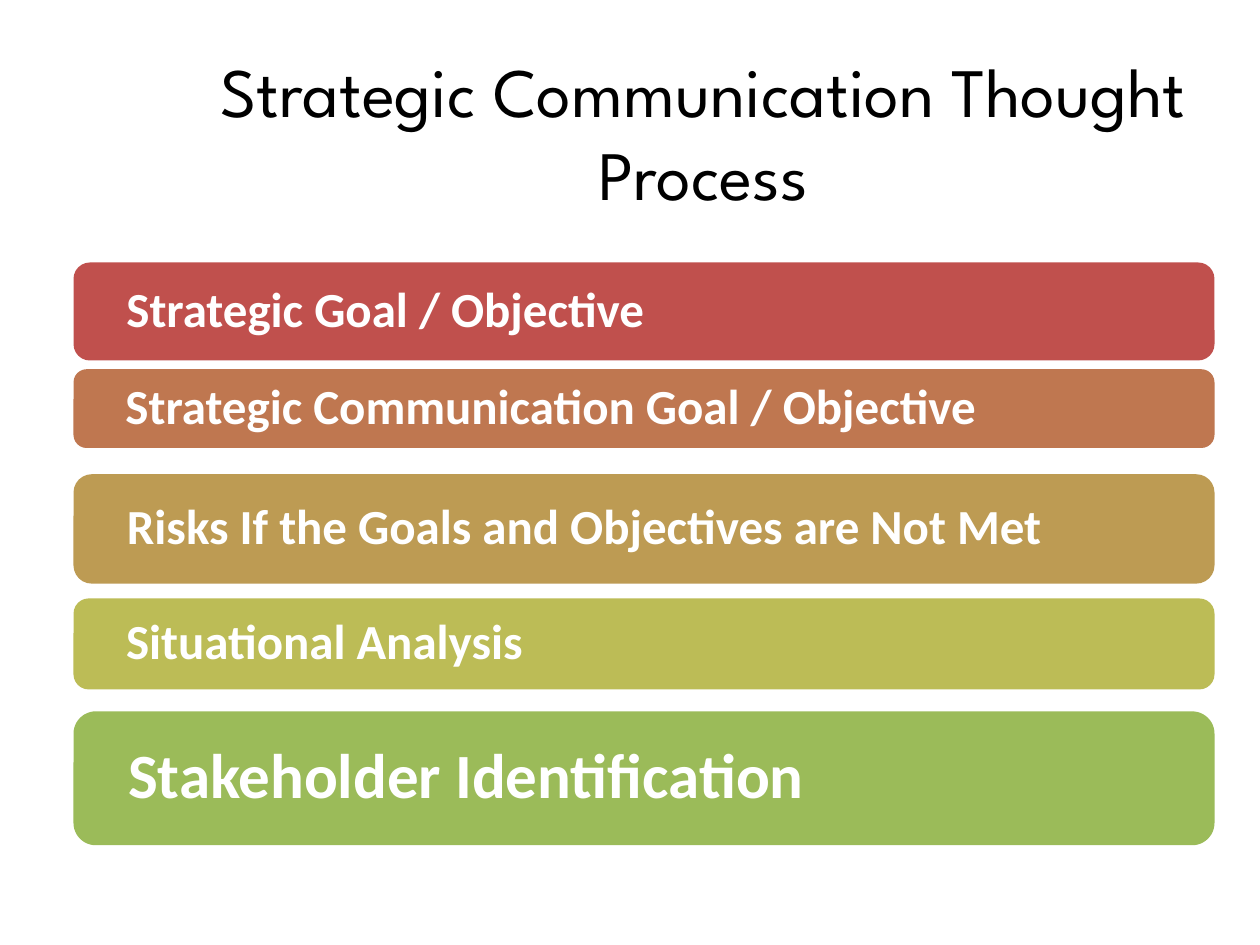
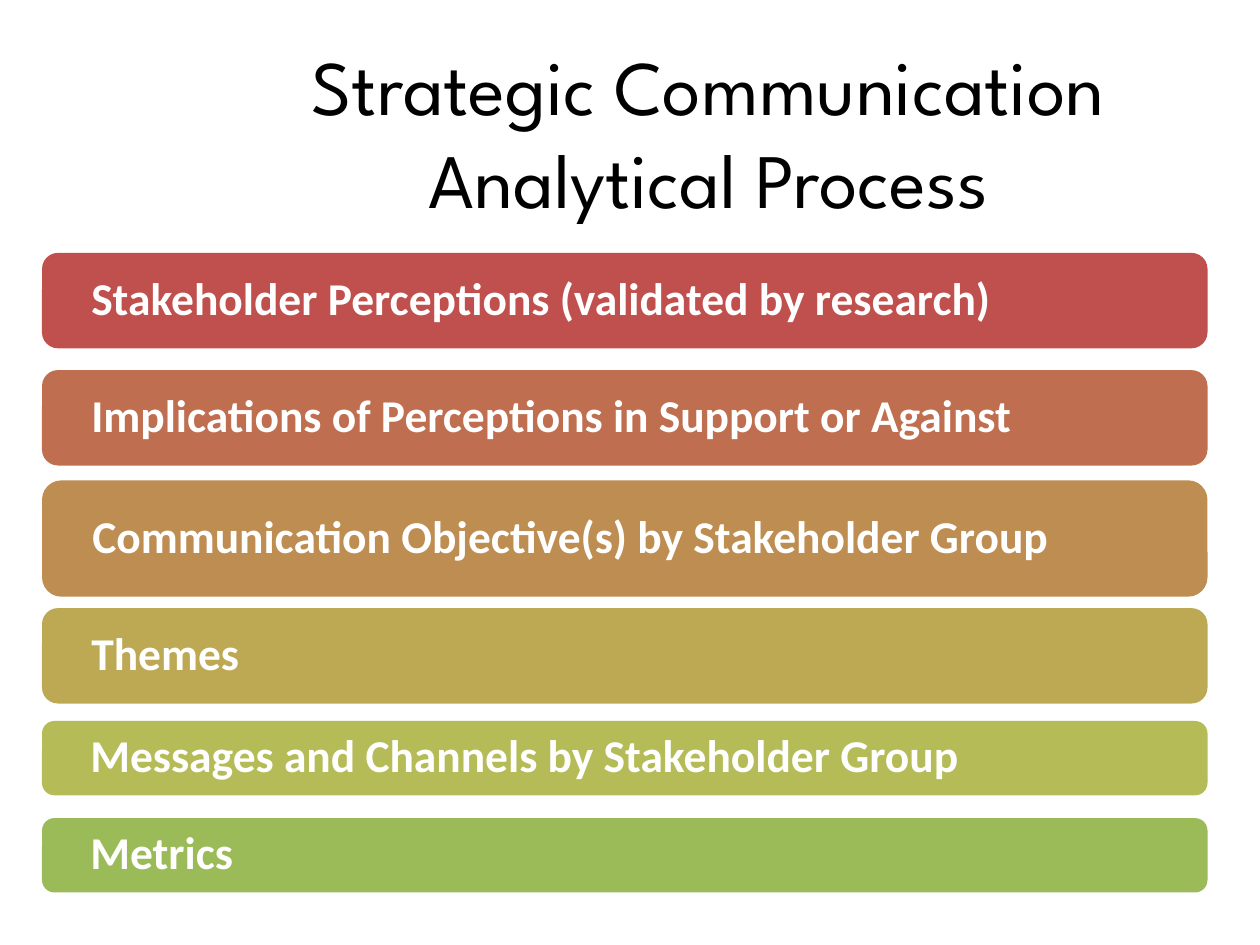
from colorsys import hls_to_rgb, rgb_to_hls

from pptx import Presentation
from pptx.dml.color import RGBColor
from pptx.enum.shapes import MSO_SHAPE
from pptx.enum.text import MSO_ANCHOR, PP_ALIGN
from pptx.util import Pt

# Each bar: text, top, height and, where it differs, font size
SLIDES = [
    {
        "title": "Strategic Communication Thought Process",
        "title_box": (108, 24, 588, 102),
        "title_size": 39.6,
        "bars_left": 42,
        "bars_width": 652,
        "bar_size": 28,
        "indent": 27.5,
        "bars": [
            ("Strategic Goal / Objective", 150, 56),
            ("Strategic Communication Goal / Objective", 211, 45),
            ("Risks If the Goals and Objectives are Not Met", 271, 62.5),
            ("Situational Analysis", 342, 52),
            ("Stakeholder Identification", 406.5, 76.5, 36),
        ],
    },
    {
        "title": "Strategic Communication Analytical Process",
        "title_box": (78, 12, 654, 126),
        "title_size": 44,
        "bars_left": 24,
        "bars_width": 666,
        "bar_size": 26,
        "indent": 25.5,
        "bars": [
            ("Stakeholder Perceptions (validated by research)", 144.5, 54.5),
            ("Implications of Perceptions in Support or Against", 211.5, 54.5),
            ("Communication Objective(s) by Stakeholder Group", 274.5, 66.5),
            ("Themes", 347.5, 54.5),
            ("Messages and Channels by Stakeholder Group", 412, 42.5),
            ("Metrics", 467.5, 42.5),
        ],
    },
]

TITLE_FONT = "League Spartan"
BAR_FONT = "Calibri"
BLACK = RGBColor(0x00, 0x00, 0x00)
WHITE = RGBColor(0xFF, 0xFF, 0xFF)
FIRST_BAR = RGBColor(0xC0, 0x50, 0x4D)
LAST_BAR = RGBColor(0x9B, 0xBB, 0x59)

ROUNDED = MSO_SHAPE.ROUNDED_RECTANGLE
MIDDLE = MSO_ANCHOR.MIDDLE
LEFT, CENTER = PP_ALIGN.LEFT, PP_ALIGN.CENTER
BLANK_LAYOUT = 6


def blend(share):
    """Colour between the first and last bar, stepping evenly through hue."""
    first, last = (rgb_to_hls(*(part / 255 for part in colour))
                   for colour in (FIRST_BAR, LAST_BAR))
    mixed = [a + (b - a) * share for a, b in zip(first, last)]
    return RGBColor(*(round(part * 255) for part in hls_to_rgb(*mixed)))


def write(shape, text, *, font, size, color, bold=False, align=LEFT,
          line_spacing=1.0, indent=7.2):
    frame = shape.text_frame
    frame.word_wrap = True
    frame.vertical_anchor = MIDDLE
    frame.margin_left = Pt(indent)
    paragraph = frame.paragraphs[0]
    paragraph.alignment = align
    paragraph.line_spacing = line_spacing
    run = paragraph.add_run()
    run.text = text
    run.font.name = font
    run.font.size = Pt(size)
    run.font.bold = bold
    run.font.color.rgb = color


def add_bar(slide, box, fill):
    bar = slide.shapes.add_shape(ROUNDED, *map(Pt, box))
    bar.shadow.inherit = False
    bar.fill.solid()
    bar.fill.fore_color.rgb = fill
    bar.line.fill.background()
    return bar


def build_slide(presentation, content):
    slide = presentation.slides.add_slide(presentation.slide_layouts[BLANK_LAYOUT])
    title = slide.shapes.add_textbox(*map(Pt, content["title_box"]))
    write(title, content["title"], font=TITLE_FONT, size=content["title_size"],
          color=BLACK, align=CENTER)

    bars = content["bars"]
    for index, (text, top, height, *own_size) in enumerate(bars):
        box = (content["bars_left"], top, content["bars_width"], height)
        bar = add_bar(slide, box, blend(index / (len(bars) - 1)))
        size = own_size[0] if own_size else content["bar_size"]
        write(bar, text, font=BAR_FONT, size=size, color=WHITE, bold=True,
              line_spacing=0.9, indent=content["indent"])


def main():
    presentation = Presentation()
    presentation.slide_width, presentation.slide_height = Pt(720), Pt(540)
    for content in SLIDES:
        build_slide(presentation, content)
    presentation.save("out.pptx")


if __name__ == "__main__":
    main()
